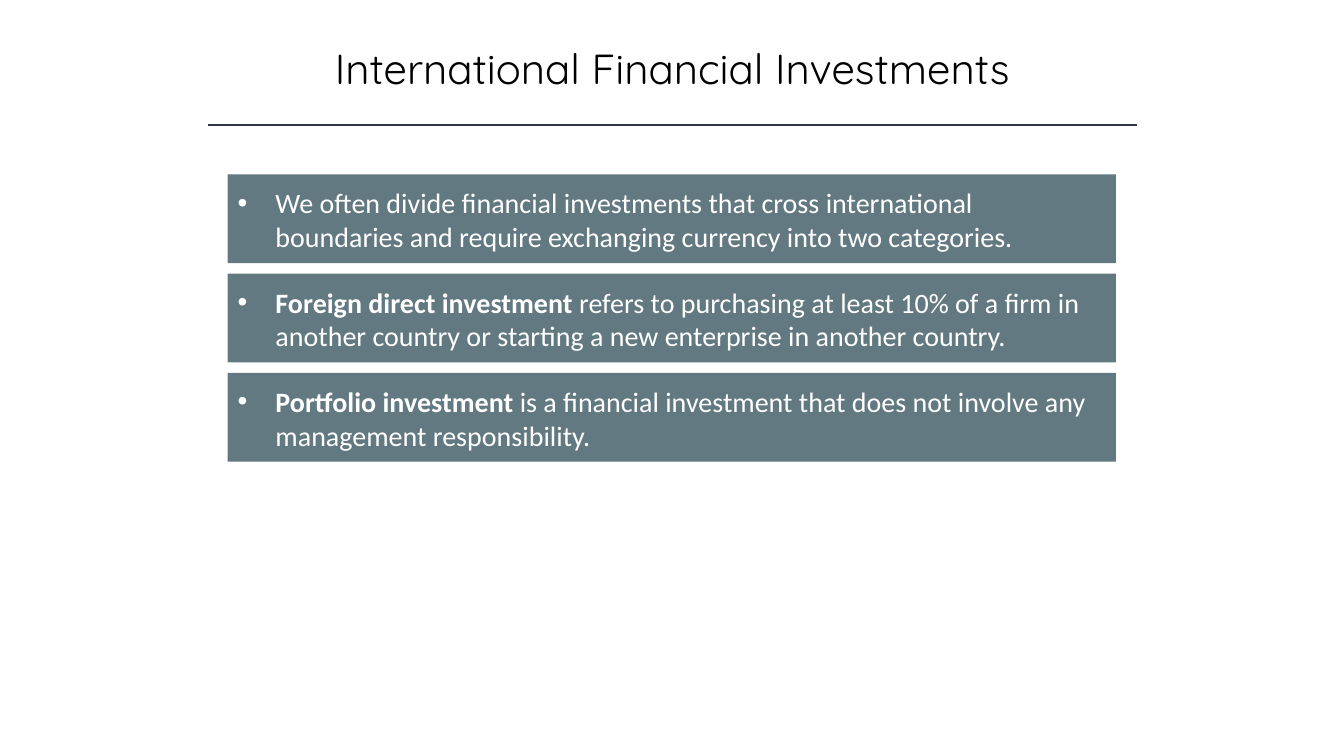
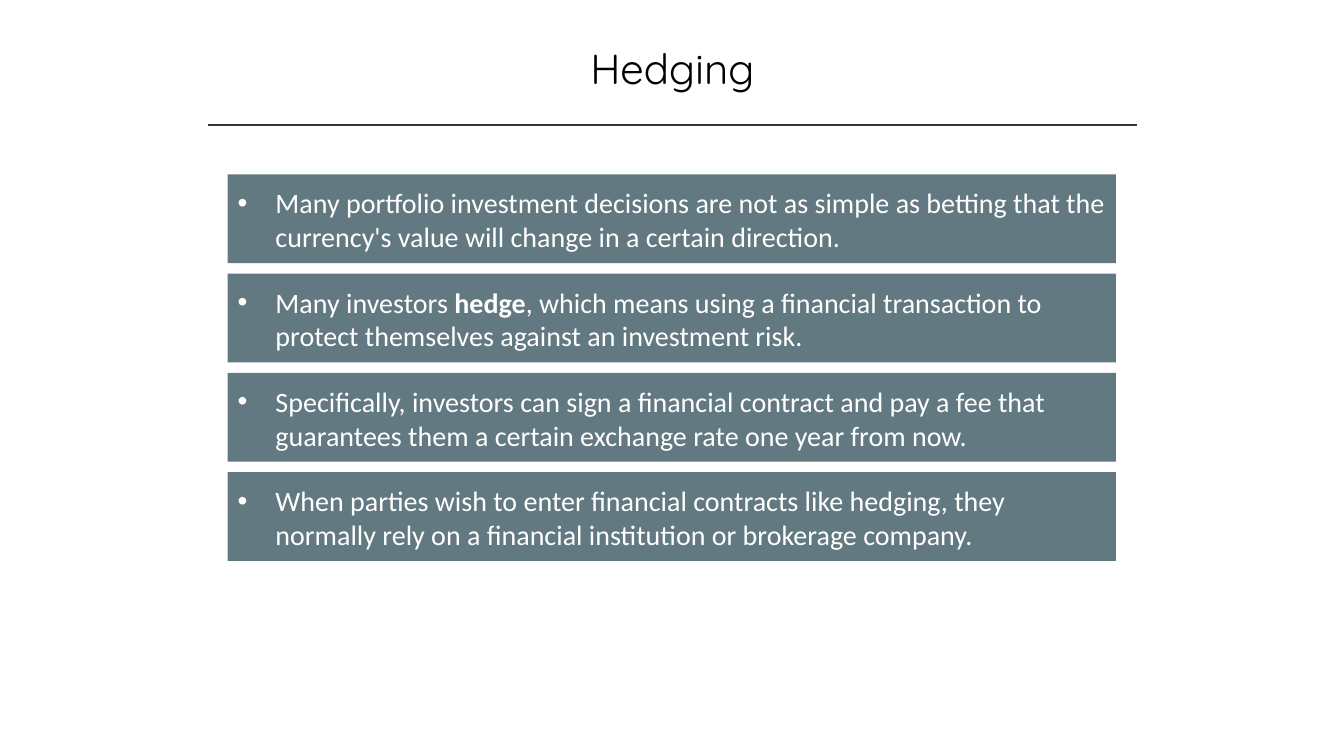
"""Build two slides on international investment and hedging."""
import pptx
import pptx.util
import pptx.dml.color
import pptx.enum.shapes
import pptx.enum.text
import pptx.oxml.ns
from lxml import etree

Pt = pptx.util.Pt
WIDTH, HEIGHT = 960, 540
TEAL, WHITE, BLACK, SLATE = "627981", "FFFFFF", "000000", "323542"
BAND_LEFT, BAND_TOP = 162.7, 124.5
BAND_WIDTH, BAND_HEIGHT = 634.4, 63.4
BAND_STEP = 70.9
HANG = 27

DECK = [
    ("International Financial Investments", [
        "We often divide financial investments that cross international "
        "boundaries and require exchanging currency into two categories.",
        "*Foreign direct investment *refers to purchasing at least 10% of a "
        "firm in another country or starting a new enterprise in another "
        "country.",
        "*Portfolio investment *is a financial investment that does not "
        "involve any management responsibility.",
    ]),
    ("Hedging", [
        "Many portfolio investment decisions are not as simple as betting "
        "that the currency's value will change in a certain direction.",
        "Many investors *hedge*, which means using a financial transaction "
        "to protect themselves against an investment risk.",
        "Specifically, investors can sign a financial contract and pay a fee "
        "that guarantees them a certain exchange rate one year from now.",
        "When parties wish to enter financial contracts like hedging, they "
        "normally rely on a financial institution or brokerage company.",
    ]),
]


def paint(code):
    return pptx.dml.color.RGBColor.from_string(code)


def add_tag(parent, name, **attrs):
    tag = etree.SubElement(parent, pptx.oxml.ns.qn(name))
    for key, value in attrs.items():
        tag.set(key, str(value))
    return tag


def write(shape, text, font, size, color, align="LEFT", top=3.6, bullet=False):
    frame = shape.text_frame
    frame.word_wrap = True
    frame.vertical_anchor = pptx.enum.text.MSO_ANCHOR.TOP
    frame.margin_left = frame.margin_right = Pt(7.2)
    frame.margin_top, frame.margin_bottom = Pt(top), Pt(3.6)
    para = frame.paragraphs[0]
    para.alignment = getattr(pptx.enum.text.PP_ALIGN, align)
    for place, part in enumerate(text.split("*")):
        if part:
            run = para.add_run()
            run.text = part
            run.font.name = font
            run.font.size = Pt(size)
            run.font.bold = place % 2 == 1
            run.font.color.rgb = paint(color)
    if bullet:
        props = para._p.get_or_add_pPr()
        props.set("marL", str(Pt(HANG)))
        props.set("indent", str(-Pt(HANG)))
        add_tag(props, "a:buFont", typeface="Arial")
        add_tag(props, "a:buChar", char="•")


def add_title(slide, text):
    box = slide.shapes.add_textbox(Pt(120.3), Pt(26.8), Pt(720), Pt(44))
    write(box, text, "Quicksand", 30, BLACK, align="CENTER")


def add_rule(slide):
    kind = pptx.enum.shapes.MSO_CONNECTOR.STRAIGHT
    rule = slide.shapes.add_connector(
        kind, Pt(148.3), Pt(89.3), Pt(812.2), Pt(89.3))
    rule.line.color.rgb = paint(SLATE)
    rule.line.width = Pt(1)
    add_tag(rule._element.spPr, "a:effectLst")


def add_band(slide, top, text):
    kind = pptx.enum.shapes.MSO_SHAPE.RECTANGLE
    band = slide.shapes.add_shape(
        kind, Pt(BAND_LEFT), Pt(top), Pt(BAND_WIDTH), Pt(BAND_HEIGHT))
    band.shadow.inherit = False
    band.fill.solid()
    band.fill.fore_color.rgb = paint(TEAL)
    band.line.fill.background()
    write(band, text, "Calibri", 20, WHITE, top=8.3, bullet=True)


def main():
    deck = pptx.Presentation()
    deck.slide_width, deck.slide_height = Pt(WIDTH), Pt(HEIGHT)
    for title, points in DECK:
        slide = deck.slides.add_slide(deck.slide_layouts[6])
        add_title(slide, title)
        add_rule(slide)
        for row, point in enumerate(points):
            add_band(slide, BAND_TOP + row * BAND_STEP, point)
    deck.save("out.pptx")


if __name__ == "__main__":
    main()
